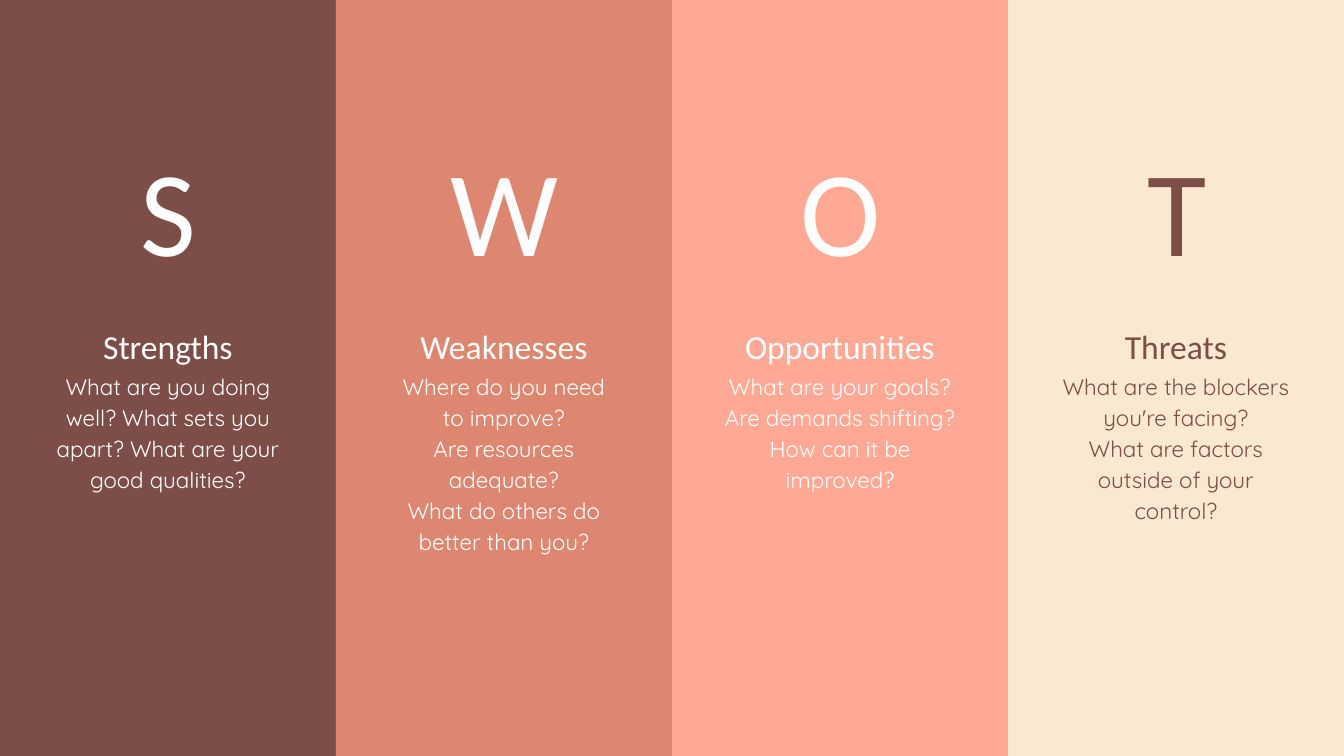
from dataclasses import dataclass

from pptx import Presentation
from pptx.dml.color import RGBColor
from pptx.enum.shapes import MSO_SHAPE
from pptx.enum.text import MSO_AUTO_SIZE, PP_ALIGN
from pptx.util import Pt

RECTANGLE = MSO_SHAPE.RECTANGLE
CENTER = PP_ALIGN.CENTER
GROW = MSO_AUTO_SIZE.SHAPE_TO_FIT_TEXT

EMU_PER_PX = 4572
SLIDE_WIDTH, SLIDE_HEIGHT = 2000, 1125
BLANK_LAYOUT = 6


@dataclass(frozen=True)
class TextStyle:
    font: str
    size: int
    spacing: float


@dataclass(frozen=True)
class Theme:
    brown: str = "7D4E47"
    terracotta: str = "DD8670"
    salmon: str = "FFA994"
    cream: str = "FAE8D0"
    white: str = "FFFFFF"
    initial: TextStyle = TextStyle("Calibri", 65, 1.05)
    heading: TextStyle = TextStyle("Calibri", 18, 1.3)
    questions: TextStyle = TextStyle("Quicksand", 12, 1.15)


THEME = Theme()

QUADRANTS = [
    ("Strengths", THEME.brown, THEME.white, 180,
     "What are you doing well? What sets you apart? What are your good qualities?"),
    ("Weaknesses", THEME.terracotta, THEME.white, 272,
     "Where do you need\nto improve?\nAre resources adequate?\n"
     "What do others do better than you?"),
    ("Opportunities", THEME.salmon, THEME.white, 180,
     "What are your goals? Are demands shifting? How can it be improved?"),
    ("Threats", None, THEME.brown, 226,
     "What are the blockers you're facing?\n"
     "What are factors outside of your control?"),
]
COLUMN_WIDTH = SLIDE_WIDTH // len(QUADRANTS)


def px(length):
    return length * EMU_PER_PX


def set_background(slide, color):
    fill = slide.background.fill
    fill.solid()
    fill.fore_color.rgb = RGBColor.from_string(color)


def add_panel(shapes, left, color):
    panel = shapes.add_shape(
        RECTANGLE, px(left), 0, px(COLUMN_WIDTH), px(SLIDE_HEIGHT))
    panel.shadow.inherit = False
    panel.fill.solid()
    panel.fill.fore_color.rgb = RGBColor.from_string(color)
    panel.line.fill.background()


def add_label(shapes, bounds, text, style, color):
    label = shapes.add_textbox(*map(px, bounds))
    frame = label.text_frame
    frame.word_wrap = True
    frame.auto_size = GROW
    frame.margin_left = frame.margin_right = 0
    frame.margin_top = frame.margin_bottom = 0
    frame.text = text
    for paragraph in frame.paragraphs:
        paragraph.alignment = CENTER
        paragraph.line_spacing = style.spacing
        for run in paragraph.runs:
            run.font.name = style.font
            run.font.size = Pt(style.size)
            run.font.color.rgb = RGBColor.from_string(color)


def add_quadrant(slide, left, quadrant):
    heading, panel_color, text_color, questions_height, questions = quadrant
    if panel_color:
        add_panel(slide.shapes, left, panel_color)
    add_label(slide.shapes, (left + 105, 190, 292, 218), heading[0],
              THEME.initial, text_color)
    description = slide.shapes.add_group_shape().shapes
    add_label(description, (left + 77, 550, 346, questions_height), questions,
              THEME.questions, text_color)
    add_label(description, (left + 77, 467, 346, 60), heading,
              THEME.heading, text_color)


def main():
    presentation = Presentation()
    presentation.slide_width = px(SLIDE_WIDTH)
    presentation.slide_height = px(SLIDE_HEIGHT)
    slide = presentation.slides.add_slide(
        presentation.slide_layouts[BLANK_LAYOUT])
    set_background(slide, THEME.cream)
    for column, quadrant in enumerate(QUADRANTS):
        add_quadrant(slide, column * COLUMN_WIDTH, quadrant)
    presentation.save("out.pptx")


if __name__ == "__main__":
    main()
